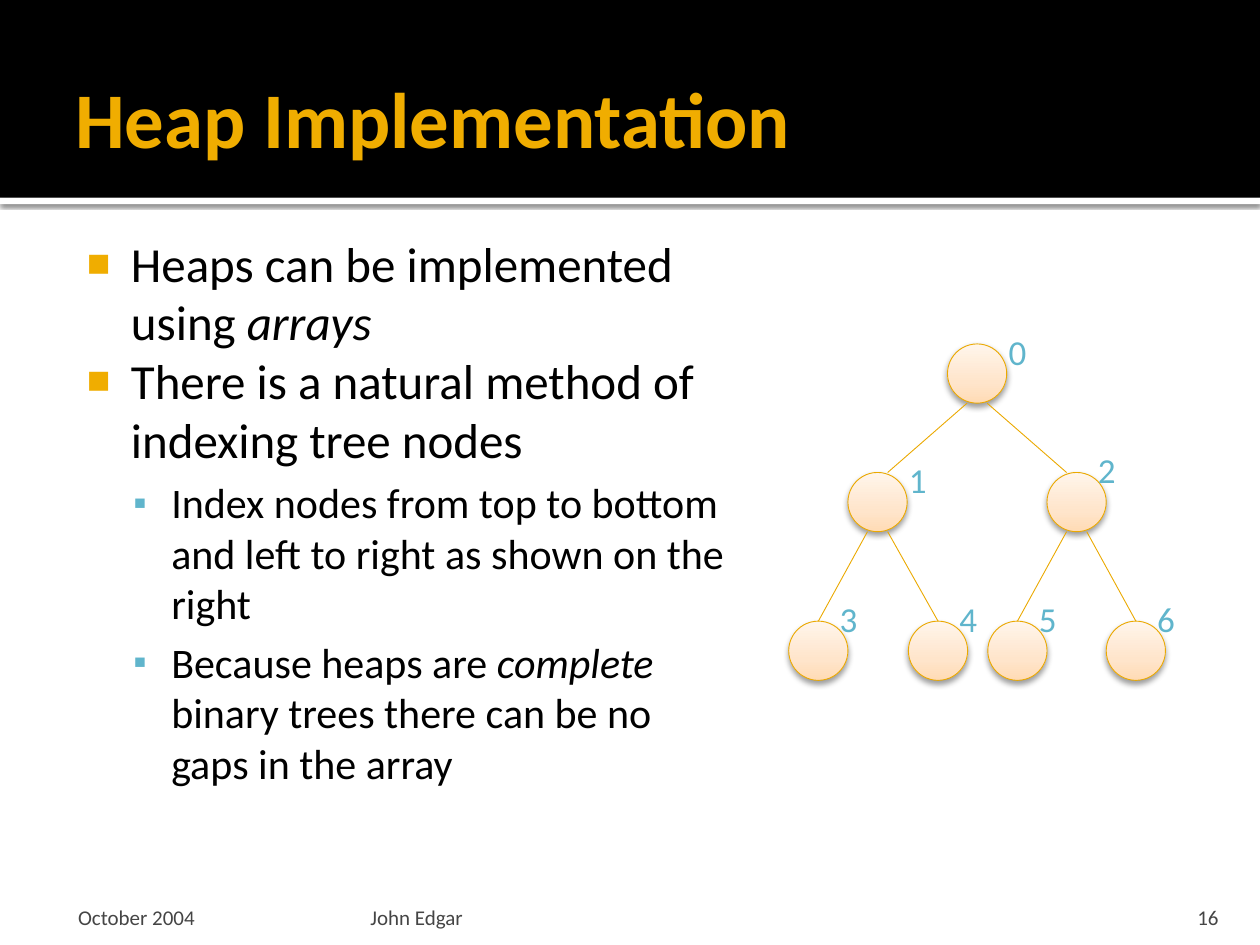
from lxml import etree
from pptx import Presentation
from pptx.dml.color import RGBColor
from pptx.enum.shapes import MSO_CONNECTOR, MSO_SHAPE
from pptx.enum.text import MSO_ANCHOR, PP_ALIGN
from pptx.oxml import parse_xml
from pptx.oxml.ns import nsdecls, qn
from pptx.util import Inches, Pt

RECT, OVAL = MSO_SHAPE.RECTANGLE, MSO_SHAPE.OVAL
STRAIGHT = MSO_CONNECTOR.STRAIGHT
TOP, MIDDLE, BOTTOM = MSO_ANCHOR.TOP, MSO_ANCHOR.MIDDLE, MSO_ANCHOR.BOTTOM
LEFT, CENTER, RIGHT = PP_ALIGN.LEFT, PP_ALIGN.CENTER, PP_ALIGN.RIGHT
COLORS = {
    "black": "000000", "white": "FFFFFF", "gold": "F0AD00", "line": "EBA900",
    "blue": "60B5CC", "gray": "454545",
    "node_dark": "FFDBB5", "node_mid": "FFE5CB", "node_light": "FFF5EB",
}
RGB = {name: RGBColor.from_string(value) for name, value in COLORS.items()}


def add_text(box, paragraphs, size, color, insets, anchor=TOP, align=LEFT, bold=None):
    tf = s.shapes.add_textbox(*map(Inches, box)).text_frame
    frame = dict(zip(("margin_left", "margin_top", "margin_right", "margin_bottom"),
                     map(Inches, insets)))
    frame.update(word_wrap=True, vertical_anchor=anchor)
    for name, value in frame.items():
        setattr(tf, name, value)
    for i, runs in enumerate(paragraphs):
        p = tf.paragraphs[0] if i == 0 else tf.add_paragraph()
        p.alignment = align
        for text, italic in runs:
            r = p.add_run()
            r.text = text
            font = {"name": "Calibri", "size": Pt(size), "bold": bold, "italic": italic}
            for name, value in font.items():
                setattr(r.font, name, value)
            r.font.color.rgb = RGB[color]
    return tf


def add_shadow(sp, alpha, blur, dist):
    sp._element.spPr.append(parse_xml(
        f'<a:effectLst {nsdecls("a")}><a:outerShdw blurRad="{Pt(blur)}" '
        f'dist="{Pt(dist)}" dir="5400000" rotWithShape="0">'
        f'<a:srgbClr val="{COLORS["black"]}"><a:alpha val="{alpha * 1000}"/>'
        '</a:srgbClr></a:outerShdw></a:effectLst>'))


prs = Presentation()
prs.slide_width, prs.slide_height = Inches(10), Inches(7.5)
s = prs.slides.add_slide(prs.slide_layouts[6])

for top, height, color in [(1.57, 0.05, "white"), (0, 1.57, "black")]:
    sp = s.shapes.add_shape(RECT, 0, Inches(top), Inches(10), Inches(height))
    sp.fill.solid()
    sp.fill.fore_color.rgb = RGB[color]
    sp.line.fill.background()
    if color == "white":
        add_shadow(sp, 60, 2.5, 0.8)
    else:
        sp.shadow.inherit = False

add_text((0.5, 0.3, 9, 1.25), [[("Heap Implementation", None)]], 45, "gold",
         (0.1, 0.05, 0.05, 0.05), MIDDLE, bold=True)

bullets = [
    (0, [("Heaps can be implemented using ", None), ("arrays", True)]),
    (0, [("There is a natural method of indexing tree nodes", None)]),
    (1, [("Index nodes from top to bottom and left to right as shown on the right", None)]),
    (1, [("Because heaps are ", None), ("complete", True),
         (" binary trees there can be no gaps in the array", None)]),
]
levels = [
    {"margin": 0.48, "hang": 0.35, "size": 28, "before": 0,
     "char": "■", "color": "gold", "scale": 80},
    {"margin": 0.8, "hang": 0.3, "size": 24, "before": 4.8,
     "char": "▪", "color": "blue", "scale": 90},
]
tf = add_text((0.5, 1.75, 5.43, 4.95), [runs for _, runs in bullets], 28, "black",
              (0.06, 0.1, 0.1, 0.05))
for p, (level, _) in zip(tf.paragraphs, bullets):
    fmt = levels[level]
    p.level = level
    p.space_before = Pt(fmt["before"])
    for r in p.runs:
        r.font.size = Pt(fmt["size"])
    pPr = p._p.get_or_add_pPr()
    pPr.set("marL", str(Inches(fmt["margin"])))
    pPr.set("indent", str(-Inches(fmt["hang"])))
    buClr = etree.SubElement(pPr, qn("a:buClr"))
    etree.SubElement(buClr, qn("a:srgbClr"), val=COLORS[fmt["color"]])
    etree.SubElement(pPr, qn("a:buSzPct"), val=str(fmt["scale"] * 1000))
    etree.SubElement(pPr, qn("a:buFont"), typeface="Arial")
    etree.SubElement(pPr, qn("a:buChar"), char=fmt["char"])

footers = [
    (0.5, 2.33, "October 2004", LEFT, (0.12, 0.05, 0.05, 0)),
    (2.89, 6.02, "John Edgar", LEFT, (0.05, 0.05, 0.05, 0)),
    (8.97, 0.8, "16", RIGHT, (0.1, 0.05, 0.1, 0)),
]
for left, width, text, align, insets in footers:
    add_text((left, 7.08, width, 0.3), [[(text, None)]], 12, "gray", insets, BOTTOM, align)

SIZE = 0.47
nodes = [(7.52, 2.73), (6.73, 3.75), (8.31, 3.75),
         (6.26, 4.93), (7.21, 4.93), (7.84, 4.93), (8.78, 4.93)]
stops = "".join(
    f'<a:gs pos="{pos * 1000}"><a:srgbClr val="{COLORS[name]}"/></a:gs>'
    for pos, name in [(0, "node_dark"), (35, "node_mid"), (100, "node_light")])
for x, y in nodes:
    sp = s.shapes.add_shape(OVAL, Inches(x), Inches(y), Inches(SIZE), Inches(SIZE))
    sp.line.color.rgb = RGB["line"]
    sp.line.width = Pt(0.5)
    sp._element.spPr.find(qn("a:prstGeom")).addnext(parse_xml(
        f'<a:gradFill {nsdecls("a")} rotWithShape="1"><a:gsLst>{stops}</a:gsLst>'
        '<a:lin ang="16200000" scaled="0"/></a:gradFill>'))
    add_shadow(sp, 38, 3.5, 2)

for i, (x, y) in enumerate(nodes[1:], start=1):
    parent_x, parent_y = nodes[(i - 1) // 2]
    side = -0.08 if i % 2 else 0.08
    child_shift = -side if i < 3 else 0
    ends = (parent_x + SIZE / 2 + side, parent_y + SIZE, x + SIZE / 2 + child_shift, y)
    sp = s.shapes.add_connector(STRAIGHT, *map(Inches, ends))
    sp.line.color.rgb = RGB["line"]
    sp.line.width = Pt(0.5)
    etree.SubElement(sp._element.spPr, qn("a:effectLst"))

for i, (x, y) in enumerate(nodes):
    dx, dy = (0.32, -0.16) if i < 2 else (0.24, -0.24)
    add_text((x + dx, y + dy, SIZE, 0.43), [[(str(i), None)]], 20, "blue",
             (0.1, 0.05, 0.1, 0.05), align=CENTER)

prs.save("out.pptx")
